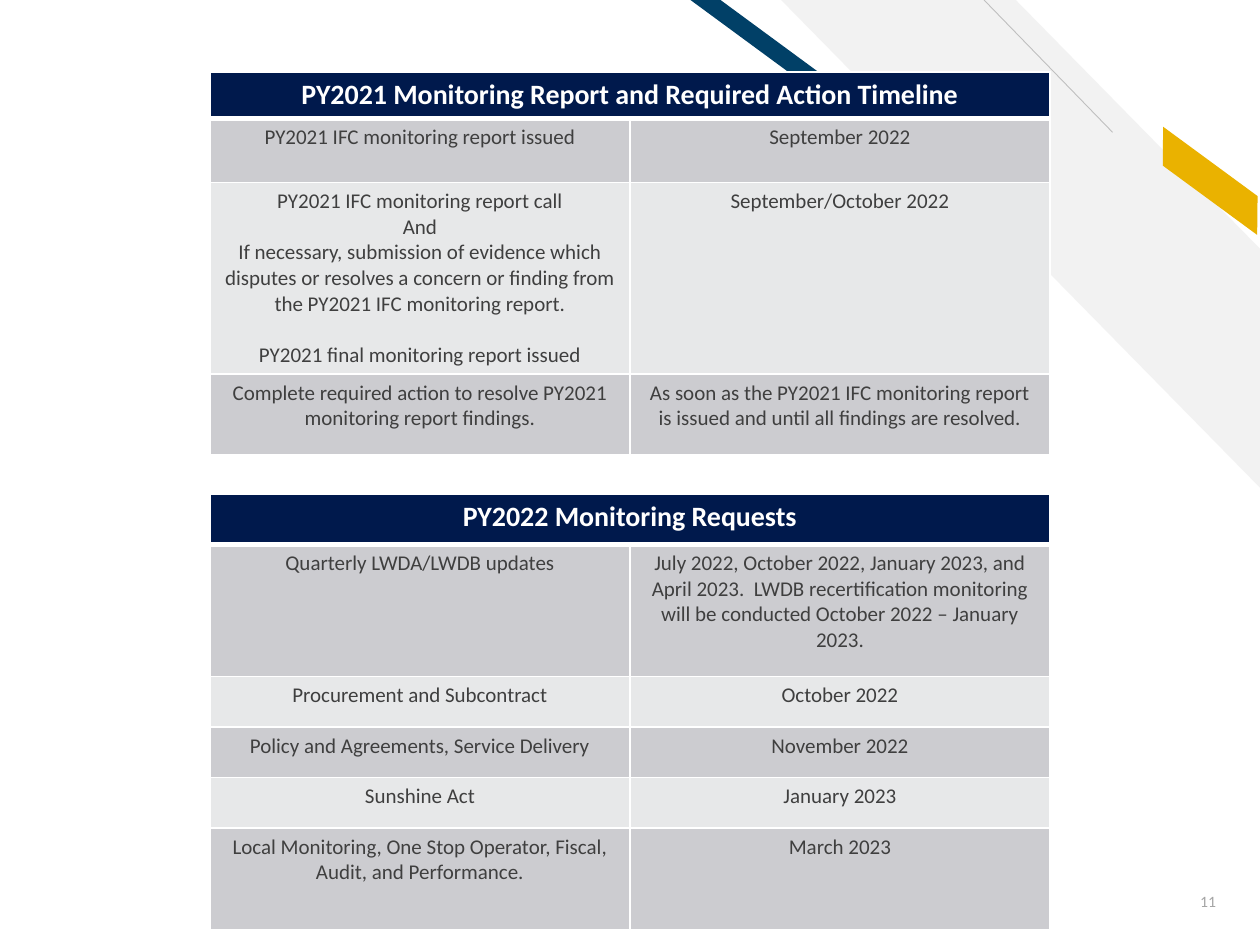
import pptx
import pptx.dml.color
import pptx.enum.shapes
import pptx.enum.text
import pptx.oxml
import pptx.oxml.ns
import pptx.util

RGBColor = pptx.dml.color.RGBColor
Shape = pptx.enum.shapes.MSO_SHAPE
Align = pptx.enum.text.PP_ALIGN

NAVY = RGBColor(0x00, 0x19, 0x4C)
TEAL = RGBColor(0x01, 0x40, 0x67)
GOLD = RGBColor(0xEA, 0xB2, 0x00)
PALE = RGBColor(0xF2, 0xF2, 0xF2)
RULE = RGBColor(0xBF, 0xBF, 0xBF)
BAND_DARK = RGBColor(0xCC, 0xCC, 0xD0)
BAND_LIGHT = RGBColor(0xE7, 0xE8, 0xE9)
INK = RGBColor(0x3F, 0x3F, 0x3F)
GREY = RGBColor(0xA5, 0xA5, 0xA5)
WHITE = RGBColor(0xFF, 0xFF, 0xFF)

# The slide is a grid of 60 columns by 45 rows of square units.
UNIT = pptx.util.Inches(10) // 60
COLUMNS, ROWS = 60, 45

HEADING = {"size": 16, "bold": True, "color": WHITE}
BODY = {"size": 12, "bold": False, "color": INK}
NUMBER = {"size": 9, "bold": False, "color": GREY}
LINE_GAP = 14.65

REPORT_ROWS = [
    (3.05, ["PY2021 IFC monitoring report issued"], ["September 2022"]),
    (9.12, ["PY2021 IFC monitoring report call", "And",
            "If necessary, submission of evidence which disputes or resolves "
            "a concern or finding from the PY2021 IFC monitoring report.",
            "PY2021 final monitoring report issued"],
     ["September/October 2022"]),
    (3.87, ["Complete required action to resolve PY2021 monitoring report findings."],
     ["As soon as the PY2021 IFC monitoring report is issued and until all "
      "findings are resolved."]),
]
REQUEST_ROWS = [
    (6.3, ["Quarterly LWDA/LWDB updates"],
     ["July 2022, October 2022, January 2023, and April 2023.  LWDB "
      "recertification monitoring will be conducted October 2022 – January 2023."]),
    (2.4, ["Procurement and Subcontract"], ["October 2022"]),
    (2.4, ["Policy and Agreements, Service Delivery"], ["November 2022"]),
    (2.4, ["Sunshine Act"], ["January 2023"]),
    (4.85, ["Local Monitoring, One Stop Operator, Fiscal, Audit, and Performance."],
     ["March 2023"]),
]


def grid(*units):
    return [pptx.util.Emu(round(unit * UNIT)) for unit in units]


def write(frame, lines, style, align):
    for index, line in enumerate(lines):
        para = frame.paragraphs[0] if index == 0 else frame.add_paragraph()
        para.alignment = align
        span = para.add_run()
        span.text = line
        values = {"name": "Calibri", "size": pptx.util.Pt(style["size"]),
                  "bold": style["bold"]}
        for name, value in values.items():
            setattr(span.font, name, value)
        span.font.color.rgb = style["color"]


def add_stripe(page, kind, area, adjustment, color, rotation=0):
    """Draw a plain shape mirrored left to right."""
    stripe = page.shapes.add_shape(kind, *grid(*area))
    stripe.shadow.inherit = False
    stripe.adjustments[0] = adjustment
    stripe.rotation = rotation
    stripe.fill.solid()
    stripe.fill.fore_color.rgb = color
    stripe.line.fill.background()
    stripe.element.spPr.xfrm.set("flipH", "1")


def add_line(page, start, end):
    line = page.shapes.add_connector(
        pptx.enum.shapes.MSO_CONNECTOR.STRAIGHT, *grid(*start, *end))
    line.line.color.rgb = RULE
    line.line.width = pptx.util.Pt(0.5)
    properties = line.element.spPr
    properties.append(properties.makeelement(pptx.oxml.ns.qn("a:effectLst"), {}))


def set_borders(cell, top, bottom):
    """Give a cell white borders; top and bottom widths are in points."""
    properties = cell._tc.get_or_add_tcPr()
    for side, width in (("L", 1), ("R", 1), ("T", top), ("B", bottom)):
        properties.append(pptx.oxml.parse_xml(
            f'<a:ln{side} {pptx.oxml.ns.nsdecls("a")} w="{pptx.util.Pt(width)}">'
            f'<a:solidFill><a:srgbClr val="{WHITE}"/></a:solidFill></a:ln{side}>'))


def fill_cell(cell, color, top, bottom):
    set_borders(cell, top, bottom)
    cell.fill.solid()
    cell.fill.fore_color.rgb = color


def add_schedule(page, top, heading, heading_height, rows):
    """Add a two-column table under a merged heading row."""
    heights = [heading_height] + [row[0] for row in rows]
    table = page.shapes.add_table(
        len(heights), 2, *grid(10, top, 40, sum(heights))).table
    for row, height in zip(table.rows, grid(*heights)):
        row.height = height
    for cell in table.rows[0].cells:
        fill_cell(cell, NAVY, 1, 3)
    table.cell(0, 0).merge(table.cell(0, 1))
    write(table.cell(0, 0).text_frame, [heading], HEADING, Align.CENTER)
    for index, (_, *texts) in enumerate(rows, start=1):
        for column, lines in enumerate(texts):
            cell = table.cell(index, column)
            fill_cell(cell, BAND_DARK if index % 2 else BAND_LIGHT,
                      3 if index == 1 else 1, 1)
            write(cell.text_frame, lines, BODY, Align.CENTER)
    return table


def add_page_number(page, text):
    box = page.shapes.add_textbox(*grid(54.84, 41.7, 3.66, 2.4))
    box.text_frame.word_wrap = True
    box.text_frame.vertical_anchor = pptx.enum.text.MSO_ANCHOR.MIDDLE
    write(box.text_frame, [text], NUMBER, Align.RIGHT)


def main():
    deck = pptx.Presentation()
    deck.slide_width, deck.slide_height = grid(COLUMNS, ROWS)
    page = deck.slides.add_slide(deck.slide_layouts[6])

    add_stripe(page, Shape.DIAGONAL_STRIPE, (37.2, 0, 22.8, 23.22), 0.51, PALE)
    add_line(page, (52.98, 6.3), (46.86, 0))
    add_stripe(page, Shape.PARALLELOGRAM, (54.3, 7.86, 6.66, 1.5), 0.72, GOLD, 36.3)
    add_stripe(page, Shape.PARALLELOGRAM, (32.88, 0, 7.14, 4.2), 1.36, TEAL)
    add_page_number(page, "11")

    add_schedule(page, 23.52, "PY2022 Monitoring Requests", 2.4, REQUEST_ROWS)
    report = add_schedule(
        page, 3.42, "PY2021 Monitoring Report and Required Action Timeline",
        2.22, REPORT_ROWS)
    final_report = report.cell(2, 0).text_frame.paragraphs[-1]
    final_report.space_before = pptx.util.Pt(LINE_GAP)

    deck.save("out.pptx")


if __name__ == "__main__":
    main()
